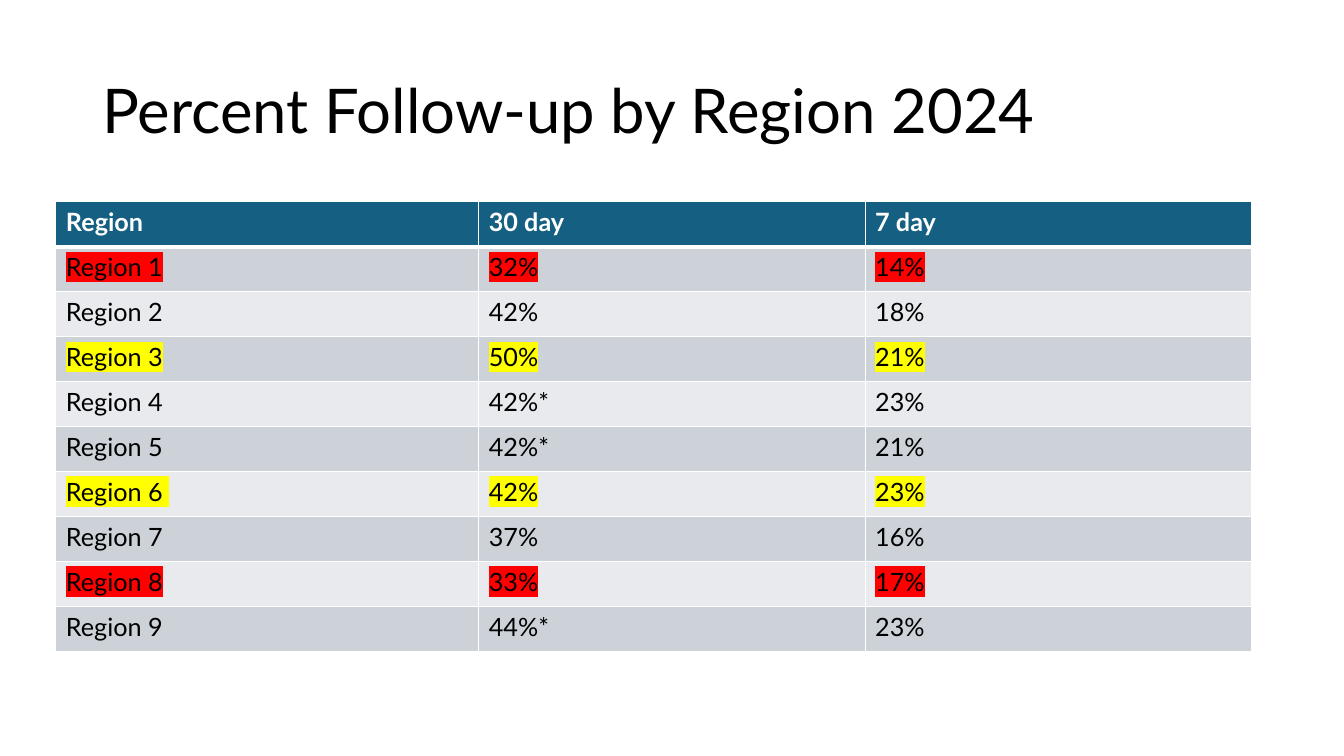
from lxml import etree
from pptx import Presentation
from pptx.dml.color import RGBColor
from pptx.enum import text
from pptx.oxml import ns
from pptx.util import Pt

TITLE = "Percent Follow-up by Region 2024"
HEADINGS = ("Region", "30 day", "7 day")
FOLLOW_UP = [
    ("Region 1", "32%", "14%", "low"),
    ("Region 2", "42%", "18%", None),
    ("Region 3", "50%", "21%", "watch"),
    ("Region 4", "42%*", "23%", None),
    ("Region 5", "42%*", "21%", None),
    ("Region 6 ", "42%", "23%", "watch"),
    ("Region 7", "37%", "16%", None),
    ("Region 8", "33%", "17%", "low"),
    ("Region 9", "44%*", "23%", None),
]
THEME = {
    "font": "Lato", "title_size": 44, "cell_size": 18,
    "ink": "000000", "paper": "FFFFFF", "header": "156082",
    "bands": ("CCD2D8", "E8EAED"),
    "low": "FF0000", "watch": "FFFF00",
    "rule": 1, "header_rule": 3,
}
SLIDE_SIZE = (960, 540)
TITLE_BOX = (66, 28.8, 828, 104.4)
TABLE_LEFT, TABLE_TOP = 39.9, 144.2
COLUMN_WIDTHS = (302.1, 276, 276)
ROW_HEIGHT = 32.1


def add_color(parent, hue):
    etree.SubElement(parent, ns.qn("a:srgbClr"), val=hue)


def write(paragraph, words, size, hue, bold=False, highlight=None):
    run = paragraph.add_run()
    run.text = words
    run.font.color.rgb = RGBColor.from_string(hue)
    for key, value in {"name": THEME["font"], "size": Pt(size), "bold": bold}.items():
        setattr(run.font, key, value)
    if highlight:
        marker = etree.Element(ns.qn("a:highlight"))
        add_color(marker, highlight)
        run.font._element.find(ns.qn("a:solidFill")).addnext(marker)


def add_borders(cell, widths):
    properties = cell._tc.get_or_add_tcPr()
    for place, (side, width) in enumerate(widths.items()):
        line = etree.Element(ns.qn(f"a:ln{side}"), w=str(Pt(width)))
        add_color(etree.SubElement(line, ns.qn("a:solidFill")), THEME["paper"])
        properties.insert(place, line)


def add_title(slide):
    frame = slide.shapes.add_textbox(*map(Pt, TITLE_BOX)).text_frame
    frame.word_wrap = True
    frame.vertical_anchor = text.MSO_ANCHOR.MIDDLE
    heading = frame.paragraphs[0]
    heading.line_spacing = 0.9
    write(heading, TITLE, THEME["title_size"], THEME["ink"])


def add_follow_up(slide):
    lines = [(*HEADINGS, None), *FOLLOW_UP]
    table = slide.shapes.add_table(
        len(lines), len(HEADINGS), Pt(TABLE_LEFT), Pt(TABLE_TOP),
        Pt(sum(COLUMN_WIDTHS)), Pt(ROW_HEIGHT * len(lines))).table
    for column, width in zip(table.columns, COLUMN_WIDTHS):
        column.width = Pt(width)
    for row, (*values, status) in enumerate(lines):
        table.rows[row].height = Pt(ROW_HEIGHT)
        header = row == 0
        fill = THEME["header"] if header else THEME["bands"][(row - 1) % 2]
        hue = THEME["paper"] if header else THEME["ink"]
        borders = dict.fromkeys("LRTB", THEME["rule"])
        if header:
            borders["B"] = THEME["header_rule"]
        elif row == 1:
            borders["T"] = THEME["header_rule"]
        for column, value in enumerate(values):
            cell = table.cell(row, column)
            cell.fill.solid()
            cell.fill.fore_color.rgb = RGBColor.from_string(fill)
            add_borders(cell, borders)
            write(cell.text_frame.paragraphs[0], value, THEME["cell_size"],
                  hue, header, THEME.get(status))


def main():
    deck = Presentation()
    deck.slide_width, deck.slide_height = map(Pt, SLIDE_SIZE)
    slide = deck.slides.add_slide(deck.slide_layouts[6])
    add_title(slide)
    add_follow_up(slide)
    deck.save("out.pptx")


if __name__ == "__main__":
    main()
